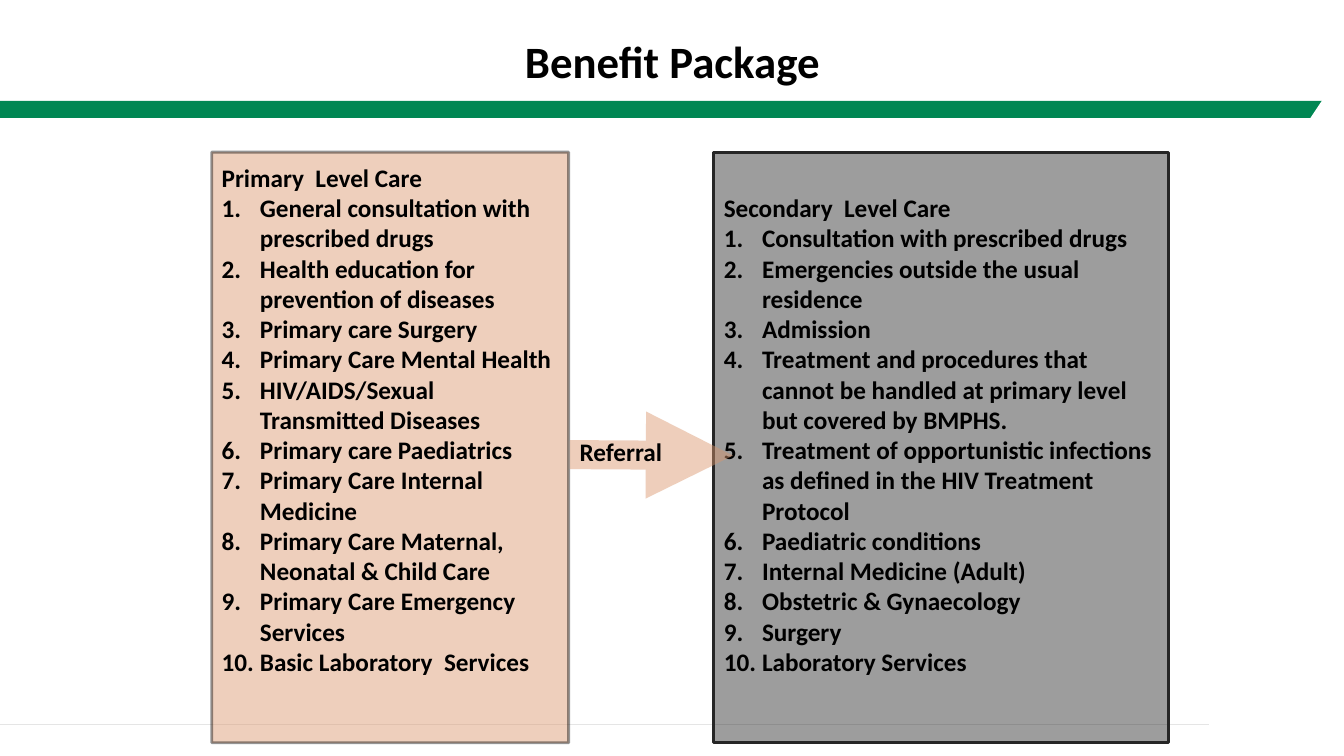
from dataclasses import dataclass

import pptx
import pptx.util
from pptx.dml.color import RGBColor
from pptx.enum.shapes import MSO_CONNECTOR, MSO_SHAPE
from pptx.enum.text import MSO_ANCHOR, PP_ALIGN
from pptx.oxml.ns import qn
from lxml import etree

PX = 9144  # EMU in one px, 100 px to the inch
FONT = "Calibri"
BLACK = RGBColor(0x00, 0x00, 0x00)
WHITE = RGBColor(0xFF, 0xFF, 0xFF)
GREEN = RGBColor(0x00, 0x87, 0x53)
PEACH = RGBColor(0xDA, 0x96, 0x6C)
CHARCOAL = RGBColor(0x26, 0x26, 0x26)
PALE_GREY = RGBColor(0xE5, 0xE5, 0xE5)

PANEL_TOP, PANEL_HEIGHT = 151, 586
INSET = 10
NUMBER_INDENT = 38


@dataclass
class CarePanel:
    left: int
    width: int
    text_top: int
    fill: RGBColor
    line: RGBColor
    line_opacity: int
    heading: str
    services: list[str]


PANELS = [
    CarePanel(210, 354, 10, PEACH, BLACK, 41, "Primary  Level Care", [
        "General consultation with prescribed drugs",
        "Health education for prevention of diseases",
        "Primary care Surgery",
        "Primary Care Mental Health",
        "HIV/AIDS/Sexual Transmitted Diseases",
        "Primary care Paediatrics",
        "Primary Care Internal Medicine",
        "Primary Care Maternal, Neonatal & Child Care",
        "Primary Care Emergency Services",
        "Basic Laboratory  Services",
    ]),
    CarePanel(708, 451, 40, CHARCOAL, CHARCOAL, 100, "Secondary  Level Care", [
        "Consultation with prescribed drugs",
        "Emergencies outside the usual residence",
        "Admission",
        "Treatment and procedures that cannot be handled at primary level "
        "but covered by BMPHS.",
        "Treatment of opportunistic infections as defined in the HIV "
        "Treatment Protocol",
        "Paediatric conditions",
        "Internal Medicine (Adult)",
        "Obstetric & Gynaecology",
        "Surgery",
        "Laboratory Services",
    ]),
]


def px(*lengths: int) -> list[int]:
    return [pptx.util.Emu(n * PX) for n in lengths]


def set_opacity(fill, percent: int) -> None:
    """Add an alpha value to a solid fill that already has its colour."""
    if percent < 100:
        color = fill._xPr.find(qn("a:solidFill"))[0]
        etree.SubElement(color, qn("a:alpha"), val=str(percent * 1000))


def add_block(slide, kind, left: int, top: int, width: int, height: int,
              color: RGBColor, opacity: int = 100):
    sp = slide.shapes.add_shape(kind, *px(left, top, width, height))
    sp.shadow.inherit = False
    sp.fill.solid()
    sp.fill.fore_color.rgb = color
    set_opacity(sp.fill, opacity)
    sp.line.fill.background()
    return sp


def add_line(slide, x1: int, y1: int, x2: int, y2: int, color: RGBColor,
             width: float, opacity: int = 100, arrow: bool = False) -> None:
    cx = slide.shapes.add_connector(MSO_CONNECTOR.STRAIGHT, *px(x1, y1, x2, y2))
    cx.line.color.rgb = color
    cx.line.width = pptx.util.Pt(width)
    set_opacity(cx.line.fill, opacity)
    if arrow:
        ln = cx.line._get_or_add_ln()
        etree.SubElement(ln, qn("a:tailEnd"), type="triangle")
    etree.SubElement(cx._element.spPr, qn("a:effectLst"))


def write(p, text: str, *, size: int = 18, align=PP_ALIGN.LEFT,
          numbered: bool = False, spacing: float | None = None) -> None:
    """Put bold black text in a paragraph; spacing is the line pitch in points."""
    p.alignment = align
    if spacing:
        p.line_spacing = pptx.util.Pt(spacing)
    if numbered:
        pPr = p._p.get_or_add_pPr()
        indent = NUMBER_INDENT * PX
        pPr.set("marL", str(indent))
        pPr.set("indent", str(-indent))
        etree.SubElement(pPr, qn("a:buFont"), typeface="+mj-lt")
        etree.SubElement(pPr, qn("a:buAutoNum"), type="arabicPeriod")
    r = p.add_run()
    r.text = text
    r.font.name = FONT
    r.font.size = pptx.util.Pt(size)
    r.font.bold = True
    r.font.color.rgb = BLACK


def add_label(slide, left: int, top: int, width: int, height: int,
              text: str, **text_format) -> None:
    box = slide.shapes.add_textbox(*px(left, top, width, height))
    box.text_frame.word_wrap = True
    write(box.text_frame.paragraphs[0], text, **text_format)


def add_panel(slide, panel: CarePanel) -> None:
    sp = add_block(slide, MSO_SHAPE.RECTANGLE, panel.left, PANEL_TOP,
                   panel.width, PANEL_HEIGHT, panel.fill, 45)
    sp.line.color.rgb = panel.line
    sp.line.width = pptx.util.Pt(2)
    set_opacity(sp.line.fill, panel.line_opacity)
    tf = sp.text_frame
    tf.word_wrap = True
    tf.vertical_anchor = MSO_ANCHOR.TOP
    tf.margin_left, tf.margin_right, tf.margin_top = px(INSET, INSET, panel.text_top)
    write(tf.paragraphs[0], panel.heading, spacing=21.6)
    for service in panel.services:
        write(tf.add_paragraph(), service, numbered=True, spacing=21.6)


def main() -> None:
    prs = pptx.Presentation()
    prs.slide_width, prs.slide_height = px(1333, 750)
    slide = prs.slides.add_slide(prs.slide_layouts[6])

    add_block(slide, MSO_SHAPE.RECTANGLE, 0, 100, 1311, 17, GREEN)
    add_block(slide, MSO_SHAPE.ISOSCELES_TRIANGLE, 1297, 100, 28, 21, WHITE)
    add_line(slide, 0, 719, 1199, 719, PALE_GREY, 1)

    for panel in PANELS:
        add_panel(slide, panel)
    add_line(slide, 565, 451, 727, 452, PEACH, 20.75, opacity=45, arrow=True)
    add_label(slide, 565, 428, 123, 36, "Referral")
    add_label(slide, 360, 29, 614, 64, "Benefit Package", size=32,
              align=PP_ALIGN.CENTER)

    prs.save("out.pptx")


if __name__ == "__main__":
    main()
